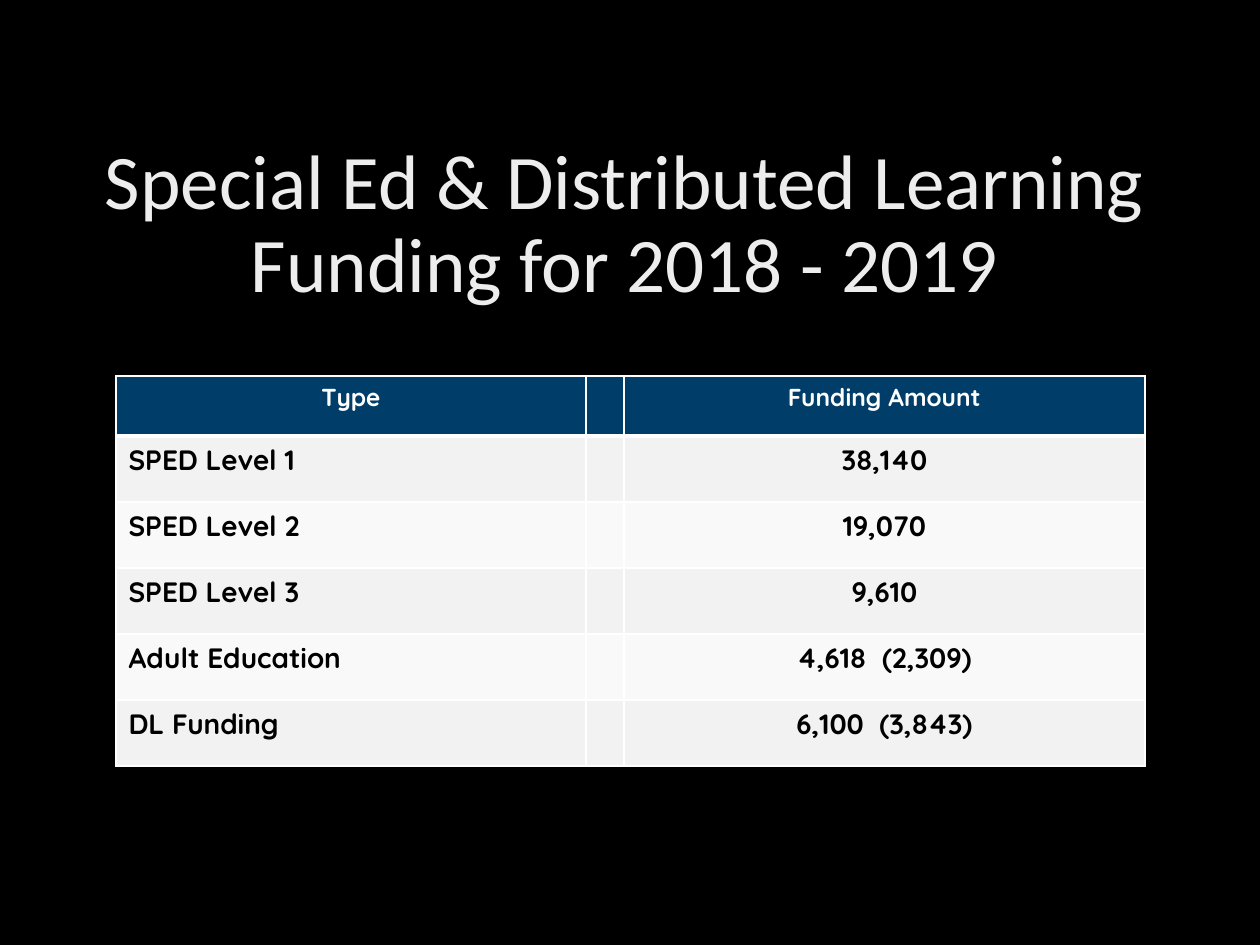
from dataclasses import dataclass

from lxml.etree import SubElement
from pptx import Presentation
from pptx.dml.color import RGBColor as RGB
from pptx.enum.text import MSO_ANCHOR as Anchor, MSO_AUTO_SIZE as AutoSize, PP_ALIGN as Align
from pptx.oxml.ns import qn
from pptx.util import Emu, Pt

PX = 914400 / 126  # EMU in one px


@dataclass(frozen=True)
class Theme:
    background: str = "000000"
    title: str = "EDEDED"
    header: str = "0070C0"
    header_alpha: int = 55
    bands: tuple = ("F2F2F2", "F9F9F9")
    line: str = "FFFFFF"
    header_text: str = "FFFFFF"
    body_text: str = "000000"
    title_font: str = "Calibri"
    table_font: str = "Quicksand"
    title_size: float = 44.1
    header_size: int = 14
    body_size: int = 16


theme = Theme()


def write(tf, text, *, font, size, color, bold=False, align=Align.LEFT, spacing=1.0):
    p = tf.paragraphs[0]
    p.alignment, p.line_spacing = align, spacing
    r = p.add_run()
    r.text = text
    r.font.name, r.font.size, r.font.bold = font, Pt(size), bold
    r.font.color.rgb = RGB.from_string(color)


def add_borders(cell, top, bottom):
    tc_pr = cell._tc.get_or_add_tcPr()
    for side, width in (("lnL", 1), ("lnR", 1), ("lnT", top), ("lnB", bottom)):
        ln = SubElement(tc_pr, qn(f"a:{side}"), w=str(Pt(width)))
        SubElement(SubElement(ln, qn("a:solidFill")), qn("a:srgbClr"), val=theme.line)


# Slide and background
prs = Presentation()
prs.slide_width, prs.slide_height = Emu(round(1260 * PX)), Emu(round(945 * PX))
s = prs.slides.add_slide(prs.slide_layouts[5])
s.background.fill.solid()
s.background.fill.fore_color.rgb = RGB.from_string(theme.background)

# Title
title = s.shapes.title
title.left, title.top, title.width, title.height = (
    Emu(round(v * PX)) for v in (58, 147, 1134, 158))
tf = title.text_frame
tf.word_wrap, tf.auto_size, tf.vertical_anchor = True, AutoSize.NONE, Anchor.MIDDLE
write(tf, "Special Ed & Distributed Learning Funding for 2018 - 2019",
      font=theme.title_font, size=theme.title_size, color=theme.title,
      align=Align.CENTER, spacing=0.9)

# Funding table, with a narrow empty column between type and amount
rows = [
    ("Type", "", "Funding Amount"),
    ("SPED Level 1", "", "38,140"),
    ("SPED Level 2", "", "19,070"),
    ("SPED Level 3", "", "9,610"),
    ("Adult Education", "", "4,618  (2,309)"),
    ("DL Funding", "", "6,100  (3,843)"),
]
col_widths = (470, 38, 521)
row_heights = [60] + [66] * (len(rows) - 1)
table = s.shapes.add_table(
    len(rows), len(col_widths),
    *(Emu(round(v * PX)) for v in (116, 376, sum(col_widths), sum(row_heights)))).table
for col, width in zip(table.columns, col_widths):
    col.width = Emu(round(width * PX))

for i, (row, height) in enumerate(zip(rows, row_heights)):
    table.rows[i].height = Emu(round(height * PX))
    header = i == 0
    for j, text in enumerate(row):
        cell = table.cell(i, j)
        add_borders(cell, top=3 if i == 1 else 1, bottom=3 if header else 1)
        cell.fill.solid()
        cell.fill.fore_color.rgb = RGB.from_string(
            theme.header if header else theme.bands[(i - 1) % 2])
        if header:
            clr = cell._tc.tcPr.find(qn("a:solidFill")).find(qn("a:srgbClr"))
            SubElement(clr, qn("a:alpha"), val=str(theme.header_alpha * 1000))
        if text:
            write(cell.text_frame, text, font=theme.table_font, bold=True,
                  size=theme.header_size if header else theme.body_size,
                  color=theme.header_text if header else theme.body_text,
                  align=Align.CENTER if header or j == 2 else Align.LEFT)

prs.save("out.pptx")
